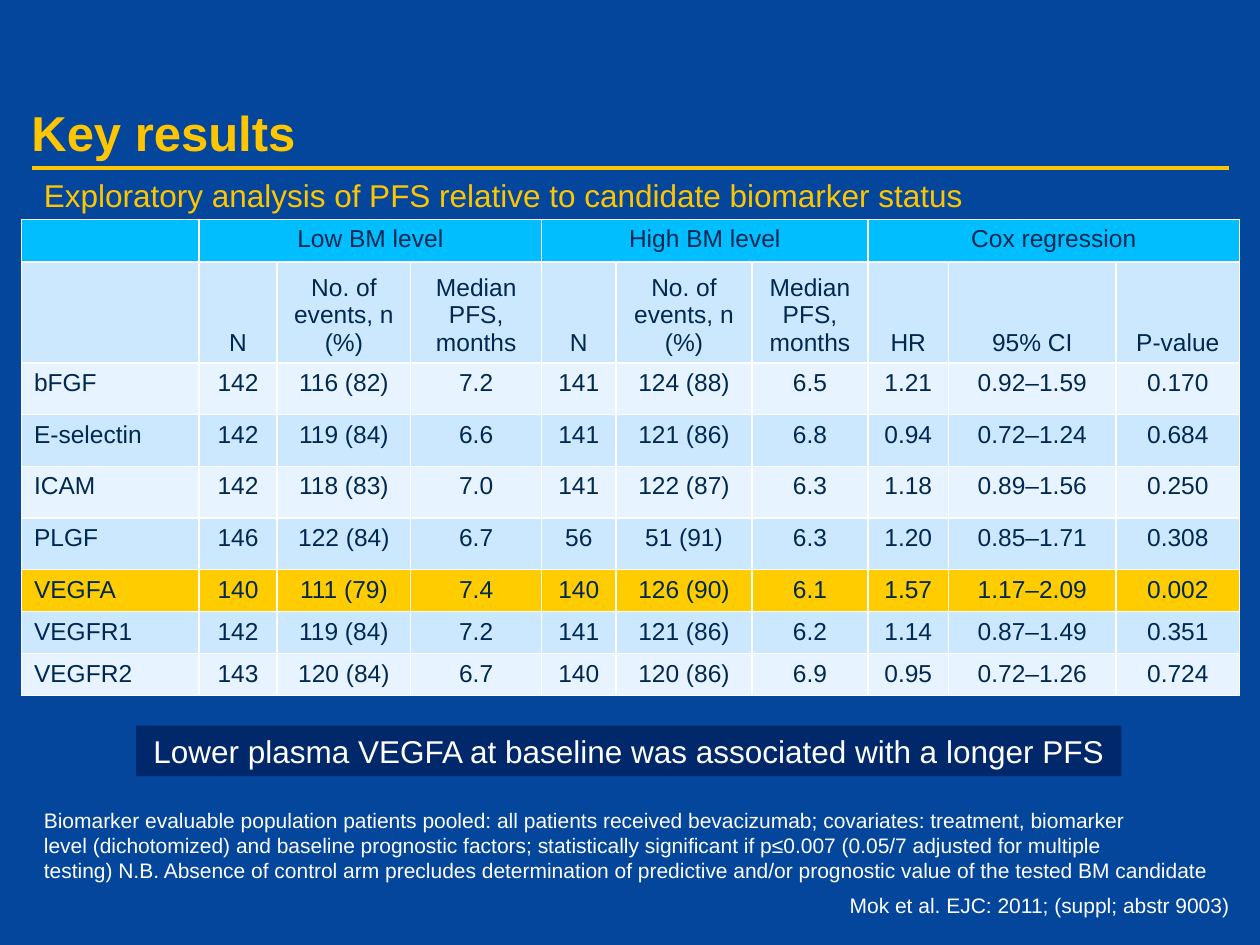
from lxml.etree import SubElement
from pptx import Presentation
from pptx.dml.color import RGBColor
from pptx.enum.shapes import MSO_CONNECTOR, MSO_SHAPE
from pptx.enum.text import MSO_ANCHOR, PP_ALIGN
from pptx.oxml.ns import qn
from pptx.util import Inches, Pt

COLORS = {
    "background": "03469C",
    "gold": "FFC600",
    "white": "FFFFFF",
    "header": "00BEFF",
    "band_dark": "CCE8FF",
    "band_light": "E7F4FF",
    "highlight": "FFCC00",
    "table_text": "002850",
    "banner": "00286A",
}
COLUMN_WIDTHS = [1.41, 0.62, 1.06, 1.04, 0.59, 1.08, 0.92, 0.64, 1.33, 0.98]
ROW_HEIGHTS = [0.34, 0.79] + [0.41] * 4 + [0.33] * 3
GROUPS = {1: "Low BM level", 4: "High BM level", 7: "Cox regression"}
GROUP_SPAN = 3
LEVEL_HEADINGS = ["N", "No. of events, n (%)", "Median PFS, months"]
HEADINGS = ["", *LEVEL_HEADINGS * 2, "HR", "95% CI", "P-value"]
BIOMARKERS = [
    ["bFGF", "142", "116 (82)", "7.2", "141", "124 (88)", "6.5", "1.21", "0.92–1.59", "0.170"],
    ["E-selectin", "142", "119 (84)", "6.6", "141", "121 (86)", "6.8", "0.94", "0.72–1.24", "0.684"],
    ["ICAM", "142", "118 (83)", "7.0", "141", "122 (87)", "6.3", "1.18", "0.89–1.56", "0.250"],
    ["PLGF", "146", "122 (84)", "6.7", "56", "51 (91)", "6.3", "1.20", "0.85–1.71", "0.308"],
    ["VEGFA", "140", "111 (79)", "7.4", "140", "126 (90)", "6.1", "1.57", "1.17–2.09", "0.002"],
    ["VEGFR1", "142", "119 (84)", "7.2", "141", "121 (86)", "6.2", "1.14", "0.87–1.49", "0.351"],
    ["VEGFR2", "143", "120 (84)", "6.7", "140", "120 (86)", "6.9", "0.95", "0.72–1.26", "0.724"],
]
SIGNIFICANT = "VEGFA"
FOOTNOTE = (
    "Biomarker evaluable population patients pooled: all patients received bevacizumab; covariates: treatment, biomarker\v"
    "level (dichotomized) and baseline prognostic factors; statistically significant if p≤0.007 (0.05/7 adjusted for multiple\v"
    "testing) N.B. Absence of control arm precludes determination of predictive and/or prognostic value of the tested BM candidate"
)
FLUSH = {"margin_left": 0, "margin_right": 0, "margin_bottom": 0}


def color(name):
    return RGBColor.from_string(COLORS[name])


def apply(target, values):
    for name, value in values.items():
        setattr(target, name, value)


def write(paragraph, text, size, color_name, align=PP_ALIGN.LEFT, bold=False):
    paragraph.alignment = align
    if not text:
        SubElement(paragraph._p, qn("a:endParaRPr"), sz=str(size * 100))
        return
    paragraph.text = text
    for run in paragraph.runs:
        apply(run.font, {"name": "Arial", "size": Pt(size), "bold": bold})
        run.font.color.rgb = color(color_name)


def add_text(slide, box, text, size, color_name, frame_format=None, **style):
    frame = slide.shapes.add_textbox(*map(Inches, box)).text_frame
    apply(frame, {"word_wrap": True, **(frame_format or {})})
    write(frame.paragraphs[0], text, size, color_name, **style)


def add_heading(slide, left, top, width, height):
    rule_top = top + 1.08
    rule = slide.shapes.add_connector(
        MSO_CONNECTOR.STRAIGHT,
        *map(Inches, (left, rule_top, left + width, rule_top)),
    )
    rule.line.color.rgb = color("gold")
    rule.line.width = Pt(2.25)
    SubElement(rule._element.spPr, qn("a:effectLst"))
    add_text(slide, (left, top, width, 1.03), "Key results", 28, "gold",
             {**FLUSH, "vertical_anchor": MSO_ANCHOR.BOTTOM}, bold=True)
    add_text(slide, (left, top + height - 0.4, width, 0.4),
             "Exploratory analysis of PFS relative to candidate biomarker status",
             18, "gold")


def add_borders(cell):
    properties = cell._tc.get_or_add_tcPr()
    for position, side in enumerate(("lnL", "lnR", "lnT", "lnB")):
        border = properties.makeelement(qn(f"a:{side}"), {"w": str(Pt(1))})
        fill = SubElement(border, qn("a:solidFill"))
        SubElement(fill, qn("a:srgbClr"), val=COLORS["white"])
        properties.insert(position, border)


def row_color(index, name):
    if index == 0:
        return "header"
    if name == SIGNIFICANT:
        return "highlight"
    return "band_dark" if index % 2 else "band_light"


def add_results(slide, left, top, width, height):
    group_row = [GROUPS.get(column, "") for column in range(len(COLUMN_WIDTHS))]
    rows = [group_row, HEADINGS, *BIOMARKERS]
    results = slide.shapes.add_table(
        len(rows), len(COLUMN_WIDTHS), *map(Inches, (left, top, width, height))
    ).table
    for column, column_width in zip(results.columns, COLUMN_WIDTHS):
        column.width = Inches(column_width)
    for row, row_height in zip(results.rows, ROW_HEIGHTS):
        row.height = Inches(row_height)
    for row_index, values in enumerate(rows):
        for column_index, value in enumerate(values):
            cell = results.cell(row_index, column_index)
            cell.fill.solid()
            cell.fill.fore_color.rgb = color(row_color(row_index, values[0]))
            cell.vertical_anchor = MSO_ANCHOR.BOTTOM if row_index == 1 else MSO_ANCHOR.TOP
            align = PP_ALIGN.CENTER if column_index else PP_ALIGN.LEFT
            write(cell.text_frame.paragraphs[0], value, 14, "table_text", align)
            add_borders(cell)
    for start in GROUPS:
        results.cell(0, start).merge(results.cell(0, start + GROUP_SPAN - 1))


def add_banner(slide, left, top, width, height):
    banner = slide.shapes.add_shape(
        MSO_SHAPE.RECTANGLE, *map(Inches, (left, top, width, height))
    )
    banner.shadow.inherit = False
    banner.fill.solid()
    banner.fill.fore_color.rgb = color("banner")
    banner.line.fill.background()
    apply(banner.text_frame, {"word_wrap": False, "vertical_anchor": MSO_ANCHOR.MIDDLE})
    write(banner.text_frame.paragraphs[0],
          "Lower plasma VEGFA at baseline was associated with a longer PFS",
          18, "white", PP_ALIGN.CENTER)


def add_notes_area(slide, left, top, width, height):
    add_text(slide, (left, top, width, 0.71), FOOTNOTE, 12, "white")
    add_text(slide, (left + 6.42, top + height - 0.2, 3.09, 0.2),
             "Mok et al. EJC: 2011; (suppl; abstr 9003)", 12, "white",
             {**FLUSH, "margin_top": 0, "vertical_anchor": MSO_ANCHOR.BOTTOM},
             align=PP_ALIGN.RIGHT)


def main():
    deck = Presentation()
    apply(deck, {"slide_width": Inches(10), "slide_height": Inches(7.5)})
    slide = deck.slides.add_slide(deck.slide_layouts[6])
    slide.background.fill.solid()
    slide.background.fill.fore_color.rgb = color("background")
    add_heading(slide, 0.25, 0.25, 9.5, 1.5)
    add_results(slide, 0.17, 1.74, 9.67, 3.76)
    add_notes_area(slide, 0.25, 6.36, 9.66, 0.92)
    add_banner(slide, 1.08, 5.76, 7.82, 0.4)
    deck.save("out.pptx")


if __name__ == "__main__":
    main()
